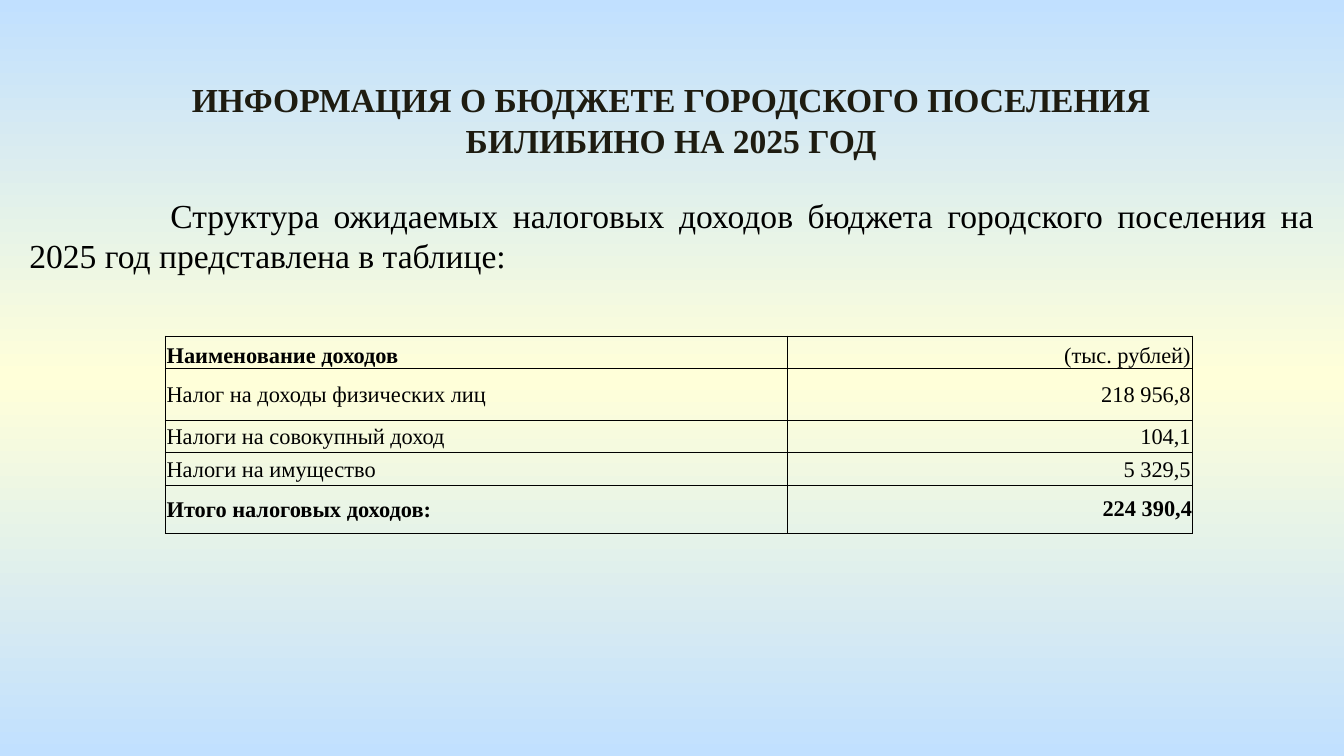
"""Build the slide on expected tax income of the town budget."""
from copy import deepcopy
from dataclasses import dataclass

from lxml import etree
from pptx import Presentation
from pptx.dml.color import RGBColor
from pptx.enum.text import MSO_ANCHOR, MSO_AUTO_SIZE, PP_ALIGN
from pptx.oxml.ns import qn
from pptx.slide import Slide
from pptx.table import _Cell
from pptx.text.text import _Paragraph
from pptx.util import Inches, Pt

LEFT, MID, RIGHT = PP_ALIGN.JUSTIFY, PP_ALIGN.CENTER, PP_ALIGN.RIGHT
LOW, HALF = MSO_ANCHOR.BOTTOM, MSO_ANCHOR.MIDDLE
GROW = MSO_AUTO_SIZE.SHAPE_TO_FIT_TEXT
BLACK = RGBColor(0x00, 0x00, 0x00)
DARK = RGBColor(0x1E, 0x1C, 0x11)
BLUE = RGBColor(0xC1, 0xE0, 0xFF)
CREAM = RGBColor(0xFF, 0xFF, 0xD9)
FACE = "Times New Roman"
SIDES = ("a:lnL", "a:lnR", "a:lnT", "a:lnB")


@dataclass
class Block:
    text: str
    left: float
    top: float
    width: float
    align: PP_ALIGN
    color: RGBColor = BLACK
    bold: bool = False
    indent: float = 0


@dataclass
class Line:
    name: str
    value: str
    height: float
    bold: tuple[bool, bool] = (False, False)
    anchor: MSO_ANCHOR = HALF
    inset: float = 0.01


BLOCKS = [
    Block("ИНФОРМАЦИЯ О БЮДЖЕТЕ ГОРОДСКОГО ПОСЕЛЕНИЯ БИЛИБИНО НА 2025 ГОД",
          1.13, 0.54, 7.73, MID, DARK, True),
    Block("Структура ожидаемых налоговых доходов бюджета городского поселения "
          "на 2025 год представлена в таблице:",
          0.12, 1.4, 9.76, LEFT, indent=1.05),
]
LINES = [
    Line("Наименование доходов", "(тыс. рублей)", 0.24, (True, False), LOW),
    Line("Налог на доходы физических лиц", "218 956,8", 0.39),
    Line("Налоги на совокупный доход", "104,1", 0.24),
    Line("Налоги на имущество", "5 329,5", 0.24),
    Line("Итого налоговых доходов:", "224 390,4", 0.36, (True, True), inset=0),
]
WIDTHS = (4.63, 3.01)


def paint(slide: Slide) -> None:
    fill = slide.background.fill
    fill.gradient()
    fill.gradient_angle = 90
    stops = slide.element.find(".//" + qn("a:gsLst"))
    stops.insert(1, deepcopy(stops[0]))
    for stop, spot, color in zip(fill.gradient_stops, (0, 0.5, 1), (BLUE, CREAM, BLUE)):
        stop.position = spot
        stop.color.rgb = color


def write(para: _Paragraph, text: str, size: float, align: PP_ALIGN,
          color: RGBColor, bold: bool) -> None:
    para.alignment = align
    run = para.add_run()
    run.text = text
    run.font.name = FACE
    run.font.size = Pt(size)
    run.font.bold = bold
    run.font.color.rgb = color


def place(slide: Slide, block: Block) -> None:
    box = slide.shapes.add_textbox(Inches(block.left), Inches(block.top),
                                   Inches(block.width), Inches(0.71))
    frame = box.text_frame
    frame.word_wrap = True
    frame.auto_size = GROW
    para = frame.paragraphs[0]
    write(para, block.text, 18, block.align, block.color, block.bold)
    if block.indent:
        para._p.get_or_add_pPr().set("indent", str(Inches(block.indent)))


def edge(cell: _Cell) -> None:
    props = cell._tc.get_or_add_tcPr()
    for spot, side in enumerate(SIDES):
        line = etree.Element(qn(side), w=str(Pt(0.5)))
        fill = etree.SubElement(line, qn("a:solidFill"))
        etree.SubElement(fill, qn("a:srgbClr"), val=str(BLACK))
        props.insert(spot, line)


def fill_cell(cell: _Cell, text: str, align: PP_ALIGN, bold: bool,
              anchor: MSO_ANCHOR, inset: float) -> None:
    cell.fill.background()
    edge(cell)
    cell.vertical_anchor = anchor
    cell.margin_left = cell.margin_right = cell.margin_top = Inches(inset)
    cell.margin_bottom = 0
    write(cell.text_frame.paragraphs[0], text, 12, align, BLACK, bold)


def add_grid(slide: Slide) -> None:
    high = sum(line.height for line in LINES)
    grid = slide.shapes.add_table(len(LINES), len(WIDTHS), Inches(1.23), Inches(2.5),
                                  Inches(sum(WIDTHS)), Inches(high)).table
    grid.first_row = grid.horz_banding = False
    for col, width in zip(grid.columns, WIDTHS):
        col.width = Inches(width)
    for row, line in zip(grid.rows, LINES):
        row.height = Inches(line.height)
        name, value = row.cells
        fill_cell(name, line.name, LEFT, line.bold[0], line.anchor, 0.01)
        fill_cell(value, line.value, RIGHT, line.bold[1], line.anchor, line.inset)


def main() -> None:
    deck = Presentation()
    deck.slide_width = Inches(10)
    deck.slide_height = Inches(10 * 9 / 16)
    slide = deck.slides.add_slide(deck.slide_layouts[6])
    paint(slide)
    for block in BLOCKS:
        place(slide, block)
    add_grid(slide)
    deck.save("out.pptx")


if __name__ == "__main__":
    main()
